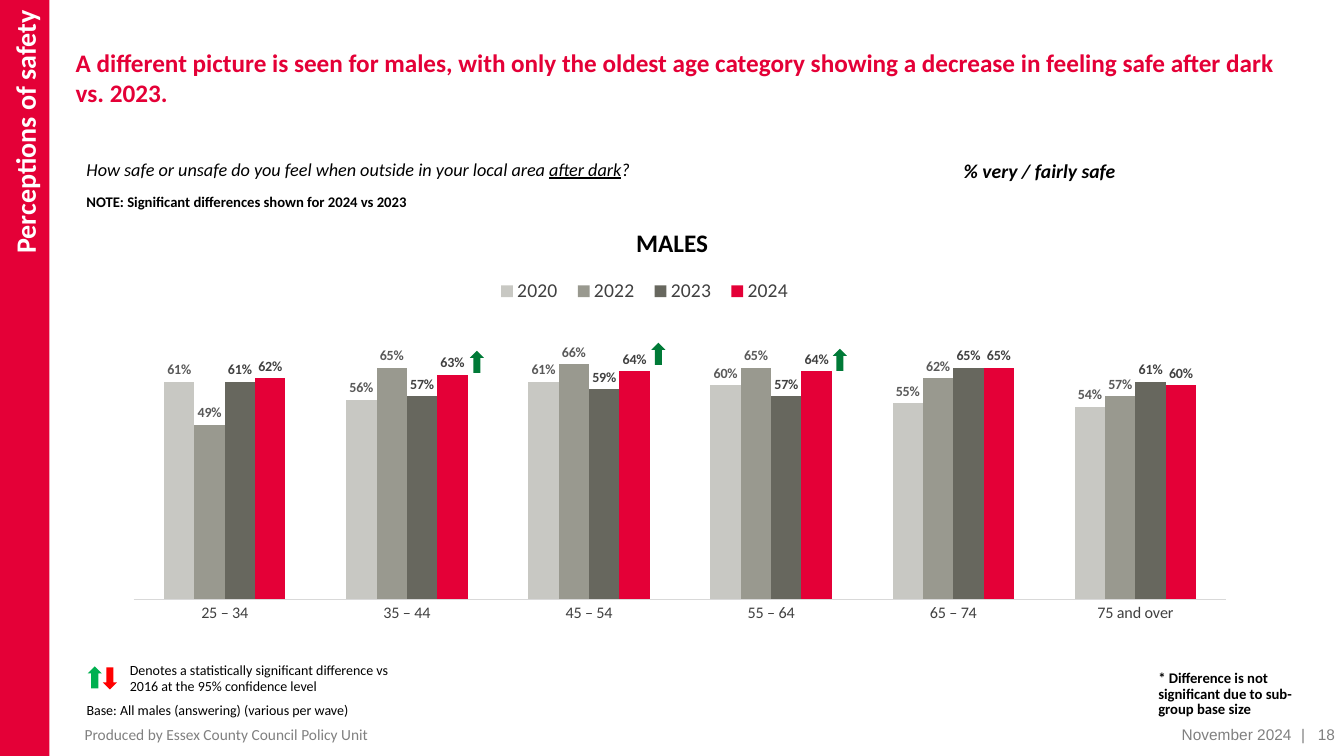
"""Build the slide on how safe males feel after dark, by age."""
import pptx
import pptx.chart.data
import pptx.dml.color
import pptx.enum.chart
import pptx.enum.shapes
import pptx.enum.text
import pptx.oxml
import pptx.oxml.ns
import pptx.util

Inches = pptx.util.Inches
Pt = pptx.util.Pt
Align = pptx.enum.text.PP_ALIGN
Anchor = pptx.enum.text.MSO_ANCHOR
Shape = pptx.enum.shapes.MSO_SHAPE
RED = "E40037"
AGES = ["25 – 34", "35 – 44", "45 – 54", "55 – 64", "65 – 74", "75 and over"]
WAVES = [
    ("2020", "C8C8C3", "595959", [0.61, 0.56, 0.61, 0.60, 0.55, 0.54]),
    ("2022", "99998F", "595959", [0.49, 0.65, 0.66, 0.65, 0.62, 0.57]),
    ("2023", "67675E", "404040", [0.61, 0.57, 0.59, 0.57, 0.65, 0.61]),
    ("2024", RED, "404040", [0.62, 0.63, 0.64, 0.64, 0.65, 0.60]),
]


def color(code):
    """Turn a hex string into a colour."""
    return pptx.dml.color.RGBColor.from_string(code)


def style(font, size, code="000000", bold=False, italic=False, name="Calibri"):
    """Set the look of a font."""
    font.name, font.size = name, Pt(size)
    font.bold, font.italic = bold, italic
    font.color.rgb = color(code)


def place(shape, box):
    """Move a shape to a box given in inches."""
    shape.left, shape.top, shape.width, shape.height = map(Inches, box)


def write(slide, box, parts, size, align=Align.LEFT, anchor=Anchor.TOP, **look):
    """Add a wrapped text box and return its paragraph."""
    frame = slide.shapes.add_textbox(*map(Inches, box)).text_frame
    frame.word_wrap, frame.vertical_anchor = True, anchor
    para = frame.paragraphs[0]
    for part in parts:
        para.add_run().text = part
    para.alignment = align
    style(para.font, size, **look)
    return para


def block(slide, kind, box, code):
    """Add a plain filled shape."""
    shape = slide.shapes.add_shape(kind, *map(Inches, box))
    shape.shadow.inherit = False
    shape.fill.solid()
    shape.fill.fore_color.rgb = color(code)
    shape.line.fill.background()
    return shape


def arrow(slide, left, top, code, kind=Shape.UP_ARROW):
    """Add a small arrow that marks a significant change."""
    block(slide, kind, (left, top, 0.14, 0.22), code)


def heading(slide, box):
    """Fill and format the title."""
    title = slide.shapes.title
    place(title, box)
    frame = title.text_frame
    frame.text = ("A different picture is seen for males, with only the oldest age "
                  "category showing a decrease in feeling safe after dark vs. 2023.")
    frame.vertical_anchor, frame.margin_bottom = Anchor.TOP, 0
    frame.paragraphs[0].alignment = Align.LEFT
    style(frame.paragraphs[0].font, 18, RED, bold=True)


def sidebar(slide, box):
    """Add the red band with its upright section name."""
    frame = block(slide, Shape.RECTANGLE, box, RED).text_frame
    frame.text = "Perceptions of safety"
    frame.margin_top, frame.margin_bottom = Inches(0.1), Inches(0.05)
    frame.vertical_anchor = Anchor.MIDDLE
    frame._txBody.bodyPr.set("vert", "vert270")
    frame.paragraphs[0].alignment = Align.RIGHT
    style(frame.paragraphs[0].font, 20, "FFFFFF", bold=True)


def question(slide, box):
    """Add the survey question, the measure, the note and the chart heading."""
    left, top, width, _ = box
    parts = ["How safe or unsafe do you feel when outside in your local area ",
             "after dark", "?"]
    para = write(slide, (left, top, 8.63, 0.32), parts, 13, italic=True)
    para.runs[1].font.underline = True
    para = write(slide, (left + 8.7, top + 0.01, 2.54, 0.34),
                 ["% very / fairly safe"], 14, bold=True, italic=True)
    para.space_before = Pt(6)
    write(slide, (left, top + 0.34, width, 0.28),
          ["NOTE: Significant differences shown for 2024 vs 2023"], 10.5, bold=True)
    write(slide, (left + 5.16, top + 0.69, 1.49, 0.4), ["MALES"], 18,
          Align.CENTER, bold=True)


def layout(part, spot, inner=False):
    """Fix a chart part at a spot given in shares of the chart."""
    old = part.find(pptx.oxml.ns.qn("c:layout"))
    if old is not None:
        part.remove(old)
    target = '<c:layoutTarget val="inner"/>' if inner else ""
    modes = "".join(f'<c:{key}Mode val="edge"/>' for key in "xy")
    sizes = "".join(f'<c:{key} val="{val}"/>' for key, val in zip("xywh", spot))
    node = pptx.oxml.parse_xml(
        f'<c:layout {pptx.oxml.ns.nsdecls("c")}><c:manualLayout>'
        f'{target}{modes}{sizes}</c:manualLayout></c:layout>')
    part.insert(0 if inner else 1, node)


def bars(slide, box):
    """Add the column chart and the arrows beside rising groups."""
    data = pptx.chart.data.CategoryChartData(number_format="0%")
    data.categories = AGES
    for name, _, _, vals in WAVES:
        data.add_series(name, vals)
    kinds = pptx.enum.chart
    chart = slide.shapes.add_chart(
        kinds.XL_CHART_TYPE.COLUMN_CLUSTERED, *map(Inches, box), data).chart
    chart.has_title = False
    style(chart.font, 10)
    chart.has_legend = True
    chart.legend.position = kinds.XL_LEGEND_POSITION.BOTTOM
    chart.legend.include_in_layout = False
    style(chart.legend.font, 14, "404040")
    layout(chart.legend._element, (0.32, 0.06, 0.28, 0.09))
    layout(chart._chartSpace.chart.plotArea, (0.005, 0, 0.973, 0.776), True)

    vaxis, caxis = chart.value_axis, chart.category_axis
    vaxis.minimum_scale, vaxis.maximum_scale = 0, 1
    vaxis.has_major_gridlines = vaxis.visible = False
    caxis.major_tick_mark = kinds.XL_TICK_MARK.NONE
    style(caxis.tick_labels.font, 11.5, "404040")
    caxis.format.line.color.rgb = color("D9D9D9")
    caxis.format.line.width = Pt(0.75)

    plot = chart.plots[0]
    plot.gap_width, plot.overlap, plot.vary_by_categories = 200, 0, False
    for series, (_, fill, ink, _) in zip(plot.series, WAVES):
        series.format.fill.solid()
        series.format.fill.fore_color.rgb = color(fill)
        labels = series.data_labels
        labels.show_value = True
        labels.number_format, labels.number_format_is_linked = "0%", False
        labels.position = kinds.XL_LABEL_POSITION.OUTSIDE_END
        style(labels.font, 10, ink, bold=True)

    for step, drop in enumerate((1.07, 0.99, 1.05)):
        arrow(slide, box[0] + 3.39 + 1.8 * step, box[1] + drop, "007A37")


def notes(slide, box):
    """Add the arrow key, the base and the caveat."""
    left, top, width, _ = box
    arrow(slide, left + 0.11, top + 0.1, "00B050")
    arrow(slide, left + 0.26, top + 0.11, "FF0000", Shape.DOWN_ARROW)
    write(slide, (left + 0.43, top, 3.04, 0.44),
          ["Denotes a statistically significant difference vs 2016 "
           "at the 95% confidence level"], 10)
    write(slide, (left, top + 0.4, 7.11, 0.27),
          ["Base: All males (answering) (various per wave)"], 10)
    para = write(slide, (left + width - 1.63, top + 0.15, 1.63, 0.46),
                 ["* Difference is not significant due to sub-group base size"],
                 10.5, bold=True)
    para.line_spacing = Pt(11)
    frame = slide.shapes[-1].text_frame
    frame.margin_top = frame.margin_bottom = 0


def footer(slide, box):
    """Add the producer, the date and the page number."""
    left, top, width, height = box
    right = left + width
    for start, wide, text, align, name in (
            (left + 0.09, 6.45, "Produced by Essex County Council Policy Unit",
             Align.LEFT, "Calibri"),
            (right - 2.83, 2.4, "November 2024", Align.RIGHT, "Arial"),
            (right - 0.85, 0.85, "|\u00a0\u00a0 18", Align.RIGHT, "Arial")):
        write(slide, (start, top, wide, height), [text], 11, align,
              Anchor.MIDDLE, code="808080", name=name)


def main():
    """Build and save the slide."""
    deck = pptx.Presentation()
    deck.slide_width, deck.slide_height = Inches(13.33), Inches(7.5)
    slide = deck.slides.add_slide(deck.slide_layouts[5])
    heading(slide, (0.65, 0.42, 12.31, 1.16))
    sidebar(slide, (0, 0, 0.49, 7.5))
    bars(slide, (1.27, 2.41, 11.14, 4.56))
    question(slide, (0.76, 1.52, 10.73, 1.09))
    notes(slide, (0.76, 6.51, 12.26, 0.67))
    footer(slide, (0.65, 7.21, 12.69, 0.15))
    deck.save("out.pptx")


if __name__ == "__main__":
    main()
